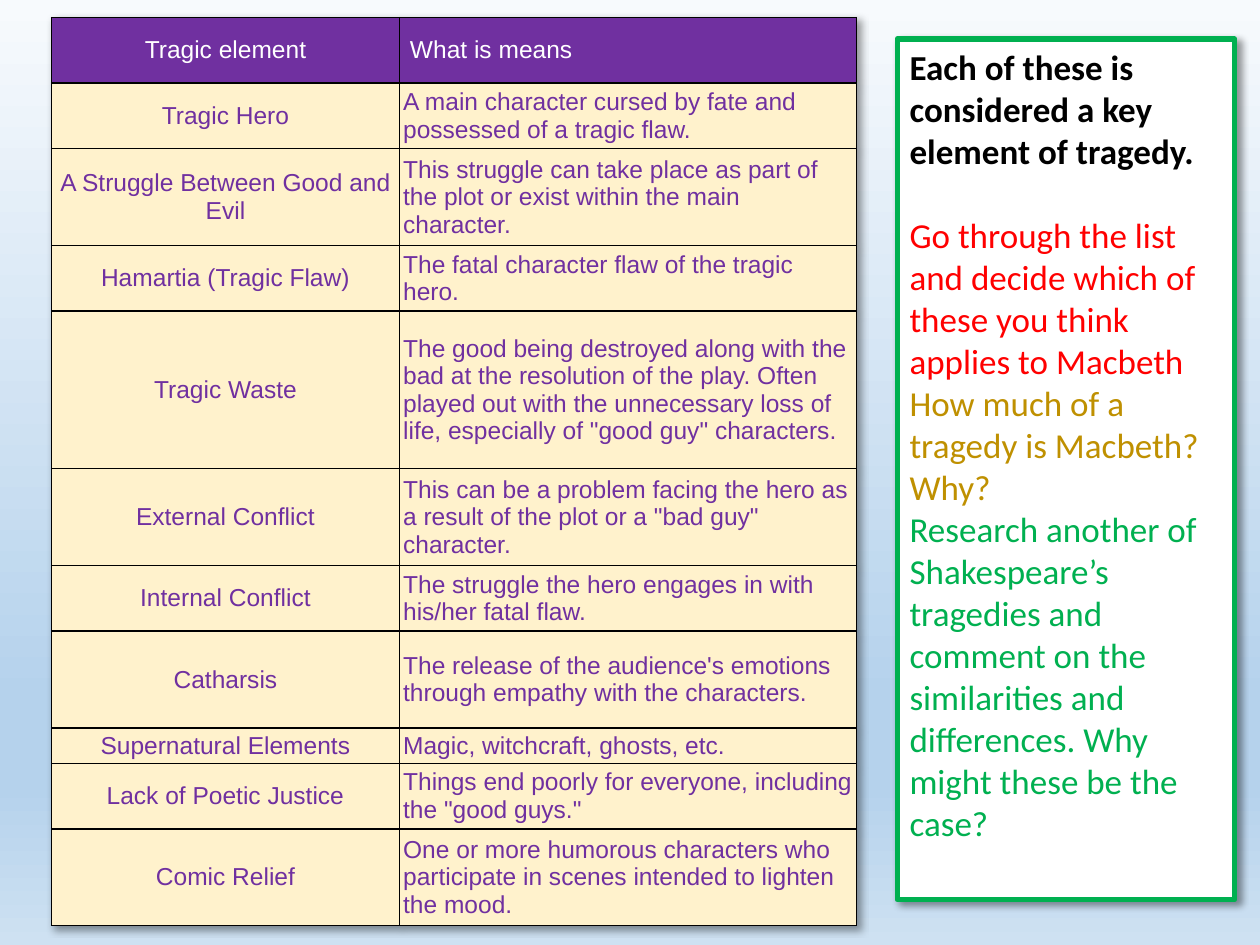
from pptx import Presentation
from pptx.dml.color import RGBColor
from pptx.enum.shapes import MSO_SHAPE
from pptx.enum.text import MSO_ANCHOR, PP_ALIGN
from pptx.oxml import parse_xml
from pptx.oxml.ns import nsdecls, qn
from pptx.util import Inches, Pt

THEME = {
    "purple": "7030A0", "cream": "FFF2CC", "white": "FFFFFF", "black": "000000",
    "red": "FF0000", "gold": "BF9000", "green": "00B050",
    "table_font": "Arial", "table_size": 14,
    "task_font": "Calibri", "task_size": 20,
    "background": [(0, "F7FAFD"), (74, "B5D2EC"), (83, "B5D2EC"), (100, "CEE1F2")],
}

# Row height in inches, element, meaning; the first row is the header
ELEMENTS = [
    (0.52, "Tragic element", " What is means"),
    (0.52, "Tragic Hero", "A main character cursed by fate and possessed of a tragic flaw."),
    (0.77, "A Struggle Between Good and Evil",
     "This struggle can take place as part of the plot or exist within the main character."),
    (0.52, "Hamartia (Tragic Flaw)", "The fatal character flaw of the tragic hero."),
    (1.25, "Tragic Waste",
     "The good being destroyed along with the bad at the resolution of the play. "
     "Often played out with the unnecessary loss of life, especially of \"good guy\" characters."),
    (0.77, "External Conflict",
     "This can be a problem facing the hero as a result of the plot or a \"bad guy\" character."),
    (0.52, "Internal Conflict", "The struggle the hero engages in with his/her fatal flaw."),
    (0.77, "Catharsis",
     "The release of the audience's emotions through empathy with the characters."),
    (0.28, "Supernatural Elements", "Magic, witchcraft, ghosts, etc."),
    (0.52, "Lack of Poetic Justice",
     "Things end poorly for everyone, including the \"good guys.\""),
    (0.77, "Comic Relief",
     "One or more humorous characters who participate in scenes intended to lighten the mood."),
]
COLUMN_WIDTHS = [2.76, 3.63]

# Text, colour, bold, space before in points
TASKS = [
    ("Each of these is considered a key element of tragedy.", "black", True, 0),
    ("Go through the list and decide which of these you think applies to Macbeth",
     "red", False, 24),
    ("How much of a tragedy is Macbeth? Why?", "gold", False, 0),
    ("Research another of Shakespeare’s tragedies and comment on the similarities "
     "and differences. Why might these be the case?", "green", False, 0),
]


def color(name):
    return RGBColor.from_string(THEME[name])


def add_text(paragraph, text, font_name, size, color_name, bold=False):
    run = paragraph.add_run()
    run.text = text
    run.font.name = font_name
    run.font.size = Pt(size)
    run.font.bold = bold
    run.font.color.rgb = color(color_name)


def shadow_effect():
    return parse_xml(
        f'<a:effectLst {nsdecls("a")}><a:outerShdw blurRad="{Pt(4)}" dist="{Pt(3)}" '
        f'dir="2700000" algn="tl" rotWithShape="0"><a:srgbClr val="{THEME["black"]}">'
        '<a:alpha val="40000"/></a:srgbClr></a:outerShdw></a:effectLst>')


def set_background(slide):
    fill = slide.background.fill
    fill.gradient()
    fill.gradient_angle = 270
    stops = slide.element.find(".//" + qn("a:gsLst"))
    for stop in list(stops):
        stops.remove(stop)
    for position, value in THEME["background"]:
        stops.append(parse_xml(f'<a:gs {nsdecls("a")} pos="{position * 1000}">'
                               f'<a:srgbClr val="{value}"/></a:gs>'))


def style_cell(cell, fill_name):
    cell.margin_left = cell.margin_right = Inches(0.03)
    cell.margin_top = cell.margin_bottom = Inches(0.01)
    cell.vertical_anchor = MSO_ANCHOR.MIDDLE
    properties = cell._tc.get_or_add_tcPr()
    for side in ("lnL", "lnR", "lnT", "lnB"):
        properties.append(parse_xml(
            f'<a:{side} {nsdecls("a")} w="{Pt(1)}"><a:solidFill>'
            f'<a:srgbClr val="{THEME["black"]}"/></a:solidFill></a:{side}>'))
    cell.fill.solid()
    cell.fill.fore_color.rgb = color(fill_name)


def add_elements_table(slide):
    heights = [row[0] for row in ELEMENTS]
    frame = slide.shapes.add_table(
        len(ELEMENTS), len(COLUMN_WIDTHS), Inches(0.41), Inches(0.14),
        Inches(sum(COLUMN_WIDTHS)), Inches(sum(heights)))
    table = frame.table
    table._tbl.tblPr.insert(0, shadow_effect())
    for column, width in zip(table.columns, COLUMN_WIDTHS):
        column.width = Inches(width)
    for row_index, (height, *texts) in enumerate(ELEMENTS):
        table.rows[row_index].height = Inches(height)
        fill_name, text_color = ("cream", "purple") if row_index else ("purple", "white")
        for column_index, text in enumerate(texts):
            cell = table.cell(row_index, column_index)
            style_cell(cell, fill_name)
            paragraph = cell.text_frame.paragraphs[0]
            paragraph.alignment = PP_ALIGN.LEFT if column_index else PP_ALIGN.CENTER
            add_text(paragraph, text, THEME["table_font"], THEME["table_size"], text_color)


def add_task_box(slide):
    box = slide.shapes.add_shape(
        MSO_SHAPE.RECTANGLE, Inches(7.12), Inches(0.31), Inches(2.68), Inches(6.83))
    box.fill.solid()
    box.fill.fore_color.rgb = color("white")
    box.line.color.rgb = color("green")
    box.line.width = Pt(3)
    box.line._get_or_add_ln().append(parse_xml(f'<a:round {nsdecls("a")}/>'))
    box._element.spPr.append(shadow_effect())
    text_frame = box.text_frame
    text_frame.word_wrap = True
    text_frame.vertical_anchor = MSO_ANCHOR.TOP
    for index, (text, color_name, bold, space) in enumerate(TASKS):
        paragraph = text_frame.add_paragraph() if index else text_frame.paragraphs[0]
        paragraph.alignment = PP_ALIGN.LEFT
        paragraph.space_before = Pt(space)
        add_text(paragraph, text, THEME["task_font"], THEME["task_size"], color_name, bold)


def main():
    presentation = Presentation()
    presentation.slide_width = Inches(10)
    presentation.slide_height = Inches(7.5)
    slide = presentation.slides.add_slide(presentation.slide_layouts[6])
    set_background(slide)
    add_elements_table(slide)
    add_task_box(slide)
    presentation.save("out.pptx")


if __name__ == "__main__":
    main()
